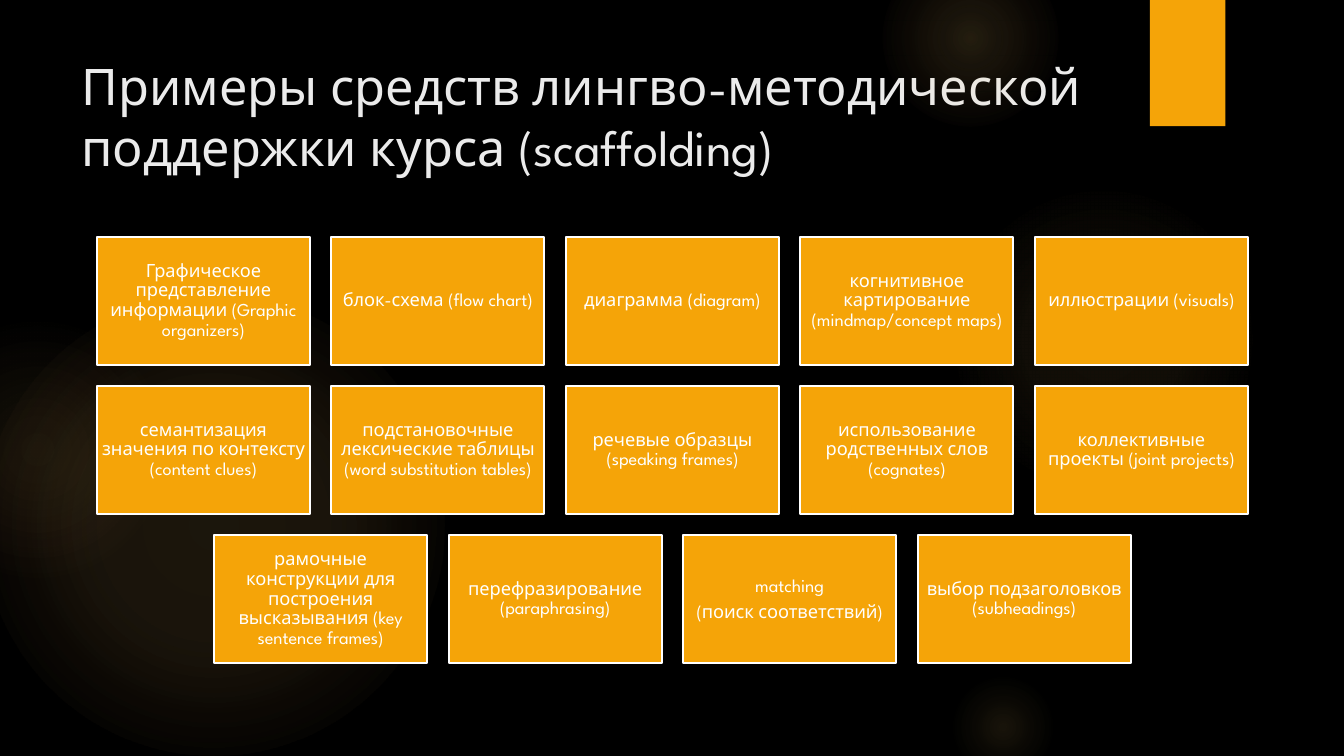
from lxml import etree
from pptx import Presentation
from pptx.dml.color import RGBColor
from pptx.enum.shapes import MSO_SHAPE
from pptx.enum.text import MSO_ANCHOR, MSO_AUTO_SIZE, PP_ALIGN
from pptx.oxml import parse_xml
from pptx.oxml.ns import nsdecls, qn
from pptx.util import Cm, Pt

RECT, OVAL = MSO_SHAPE.RECTANGLE, MSO_SHAPE.OVAL
TOP, MIDDLE = MSO_ANCHOR.TOP, MSO_ANCHOR.MIDDLE
LEFT, CENTER = PP_ALIGN.LEFT, PP_ALIGN.CENTER
NO_FIT = MSO_AUTO_SIZE.NONE
FONT = "League Spartan"
ORANGE, WHITE, PALE, BLACK = "F5A408", "FFFFFF", "EBEBEB", "000000"
GOLD, PEACH = "FAC96A", "F59B74"

TITLE = "Примеры средств лингво-методической поддержки курса (scaffolding)"
ROWS = [
    ["Графическое представление информации (Graphic organizers)",
     "блок-схема (flow chart)",
     "диаграмма (diagram)",
     "когнитивное картирование (mindmap/concept maps)",
     "иллюстрации (visuals)"],
    ["семантизация значения по контексту (content clues)",
     "подстановочные лексические таблицы (word substitution tables)",
     "речевые образцы (speaking frames)",
     "использование родственных слов (cognates)",
     "коллективные проекты (joint projects)"],
    ["рамочные конструкции для построения высказывания (key sentence frames)",
     "перефразирование (paraphrasing)",
     "matching\n(поиск соответствий)",
     "выбор подзаголовков (subheadings)"],
]
# Left, top and diameter in cm, then stops of position, colour and opacity in %
GLOWS = [
    (-0.43, 7.42, 11.63, [(0, GOLD, 11), (36, GOLD, 10), (75, GOLD, 0)]),
    (-2.34, 8.05, 6.55, [(0, GOLD, 8), (36, GOLD, 5), (71, PEACH, 0)]),
    (23.9, 4.65, 7.82, [(0, GOLD, 7), (36, GOLD, 6), (69, GOLD, 0)]),
    (22.23, -1.27, 4.45, [(0, GOLD, 14), (36, GOLD, 7), (73, GOLD, 0)]),
    (23.9, 16.94, 2.74, [(0, GOLD, 10), (31, GOLD, 5), (66, GOLD, 0)]),
]


def paint(fill, color):
    fill.solid()
    fill.fore_color.rgb = RGBColor.from_string(color)


def write(frame, words, size, color, align=LEFT, anchor=TOP, inset=None,
          spacing=1.0, after=0):
    frame.word_wrap = True
    frame.auto_size = NO_FIT
    frame.vertical_anchor = anchor
    if inset is not None:
        frame.margin_left = frame.margin_right = Cm(inset)
        frame.margin_top = frame.margin_bottom = Cm(inset)
    frame.text = words
    for para in frame.paragraphs:
        para.alignment = align
        para.line_spacing = spacing
        para.space_before = Pt(0)
        para.space_after = Pt(after)
        for run in para.runs:
            run.font.name = FONT
            run.font.size = Pt(size)
            run.font.color.rgb = RGBColor.from_string(color)


def add_shape(slide, kind, left, top, width, height):
    shape = slide.shapes.add_shape(kind, Cm(left), Cm(top), Cm(width), Cm(height))
    shape.shadow.inherit = False
    shape.line.fill.background()
    return shape


def add_glow(slide, left, top, size, stops):
    """Place a circle whose fill fades outwards."""
    glow = add_shape(slide, OVAL, left, top, size, size)
    grad = parse_xml(f'<a:gradFill {nsdecls("a")} rotWithShape="1"><a:gsLst/>'
                     '<a:path path="circle"><a:fillToRect l="50000" t="50000" '
                     'r="50000" b="50000"/></a:path></a:gradFill>')
    for pos, color, alpha in stops:
        stop = etree.SubElement(grad[0], qn("a:gs"), pos=str(pos * 1000))
        tint = etree.SubElement(stop, qn("a:srgbClr"), val=color)
        etree.SubElement(tint, qn("a:alpha"), val=str(alpha * 1000))
    glow.element.spPr.find(qn("a:prstGeom")).addnext(grad)


def add_backdrop(slide):
    paint(slide.background.fill, BLACK)
    for glow in GLOWS:
        add_glow(slide, *glow)
    ribbon = add_shape(slide, RECT, 28.98, 0, 1.9, 3.18)
    paint(ribbon.fill, ORANGE)


def add_title(slide, left, top, width, height):
    title = slide.shapes.title
    title.left, title.top = Cm(left), Cm(top)
    title.width, title.height = Cm(width), Cm(height)
    write(title.text_frame, TITLE, size=36, color=PALE)


def add_cards(slide, left, top, width, height, gap=0.54):
    """Fill the box with rows of equal cards, each row centred."""
    most = max(len(row) for row in ROWS)
    card_w = (width - gap * (most - 1)) / most
    card_h = (height - gap * (len(ROWS) - 1)) / len(ROWS)
    for i, row in enumerate(ROWS):
        start = left + (most - len(row)) * (card_w + gap) / 2
        for j, words in enumerate(row):
            card = add_shape(slide, RECT, start + j * (card_w + gap),
                             top + i * (card_h + gap), card_w, card_h)
            paint(card.fill, ORANGE)
            paint(card.line.fill, WHITE)
            card.line.width = Pt(1.5)
            write(card.text_frame, words, size=13, color=WHITE, align=CENTER,
                  anchor=MIDDLE, inset=0.13, spacing=0.9, after=4.5)


def main():
    deck = Presentation()
    deck.slide_width, deck.slide_height = Cm(33.87), Cm(19.05)
    slide = deck.slides.add_slide(deck.slide_layouts[5])
    add_backdrop(slide)
    add_title(slide, 1.8, 1.27, 28.68, 3.89)
    add_cards(slide, 2.44, 5.97, 29.01, 10.74)
    deck.save("out.pptx")


if __name__ == "__main__":
    main()
